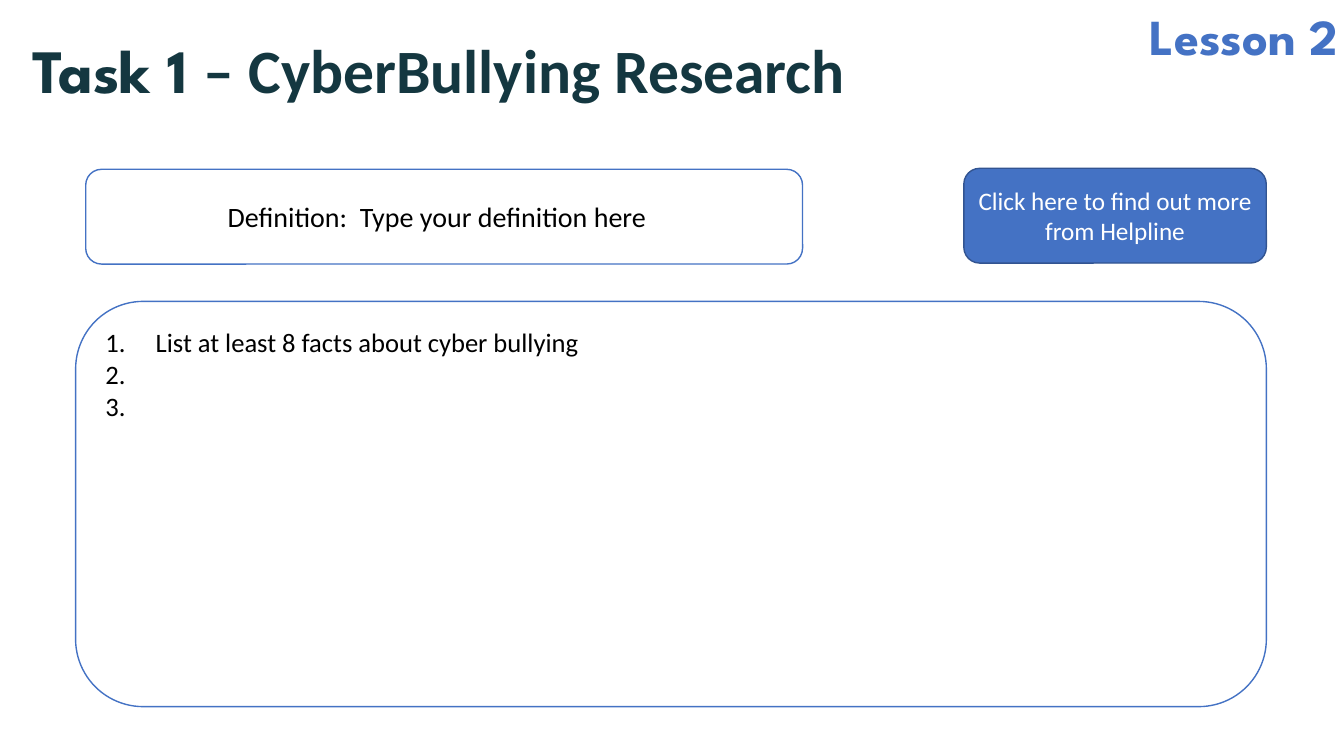
from dataclasses import dataclass

from lxml import etree
from pptx import Presentation, util as u
from pptx.dml.color import RGBColor
from pptx.enum import shapes, text
from pptx.oxml.ns import qn


@dataclass(frozen=True)
class Theme:
    blue: str = "4472C4"
    dark_blue: str = "325491"
    teal: str = "143740"
    black: str = "000000"
    white: str = "FFFFFF"
    display: str = "League Spartan"
    body: str = "Calibri"
    title: int = 44
    lesson: int = 36
    definition: int = 20
    facts: int = 19
    button: int = 18


T = Theme()
MIDDLE, TOP = text.MSO_ANCHOR.MIDDLE, text.MSO_ANCHOR.TOP
ALIGN = text.PP_ALIGN

prs = Presentation()
prs.slide_width, prs.slide_height = u.Inches(13.33), u.Inches(7.5)
s = prs.slides.add_slide(prs.slide_layouts[6])


def add_run(p, words, font, size, color, bold=False):
    r = p.add_run()
    r.text = words
    r.font.name, r.font.size, r.font.bold = font, u.Pt(size), bold
    r.font.color.rgb = RGBColor.from_string(color)


def add_panel(box, fill, line, anchor):
    """Add a rounded panel and return its text frame."""
    sp = s.shapes.add_shape(shapes.MSO_SHAPE.ROUNDED_RECTANGLE, *map(u.Inches, box))
    sp.shadow.inherit = False
    sp.fill.solid()
    sp.fill.fore_color.rgb = RGBColor.from_string(fill)
    sp.line.color.rgb = RGBColor.from_string(line)
    sp.line.width = u.Pt(1)
    tf = sp.text_frame
    tf.word_wrap, tf.vertical_anchor = True, anchor
    return tf


# Grid: panels share a right edge, the upper row shares a height
right, row_height = 12.56, 0.94
facts_left, button_width = 0.75, 3

# Headings
headings = [
    ((0.22, 0.35, 10.76, 0.97), ALIGN.LEFT, 0.9, T.title, T.teal,
     [("Task 1 ", T.display), ("– CyberBullying Research", T.body)]),
    ((10.33, 0, 3.04, 0.71), ALIGN.RIGHT, 1.0, T.lesson, T.blue,
     [("Lesson 2", T.display)]),
]
for box, align, spacing, size, color, runs in headings:
    tf = s.shapes.add_textbox(*map(u.Inches, box)).text_frame
    tf.word_wrap = True
    p = tf.paragraphs[0]
    p.alignment, p.line_spacing = align, spacing
    for words, font in runs:
        add_run(p, words, font, size, color, bold=True)

# Definition and button
tf = add_panel((0.85, 1.68, 7.11, row_height), T.white, T.blue, MIDDLE)
tf.margin_right = u.Inches(0.24)
p = tf.paragraphs[0]
p.alignment = ALIGN.CENTER
add_run(p, "Definition:  Type your definition here", T.body, T.definition, T.black)

# Numbered facts
tf = add_panel((facts_left, 2.99, right - facts_left, 4.02), T.white, T.blue, TOP)
for i, fact in enumerate(["List at least 8 facts about cyber bullying", " ", " "]):
    p = tf.add_paragraph() if i else tf.paragraphs[0]
    p.alignment = ALIGN.JUSTIFY
    pPr = p._p.get_or_add_pPr()
    pPr.set("marL", str(u.Inches(0.5)))
    pPr.set("indent", str(-u.Inches(0.5)))
    etree.SubElement(pPr, qn("a:buFont"), typeface="+mj-lt")
    etree.SubElement(pPr, qn("a:buAutoNum"), type="arabicPeriod")
    add_run(p, fact, T.body, T.facts, T.black)

tf = add_panel((right - button_width, 1.67, button_width, row_height),
               T.blue, T.dark_blue, MIDDLE)
p = tf.paragraphs[0]
p.alignment = ALIGN.CENTER
add_run(p, "Click here to find out more from Helpline", T.body, T.button, T.white)

prs.save("out.pptx")
